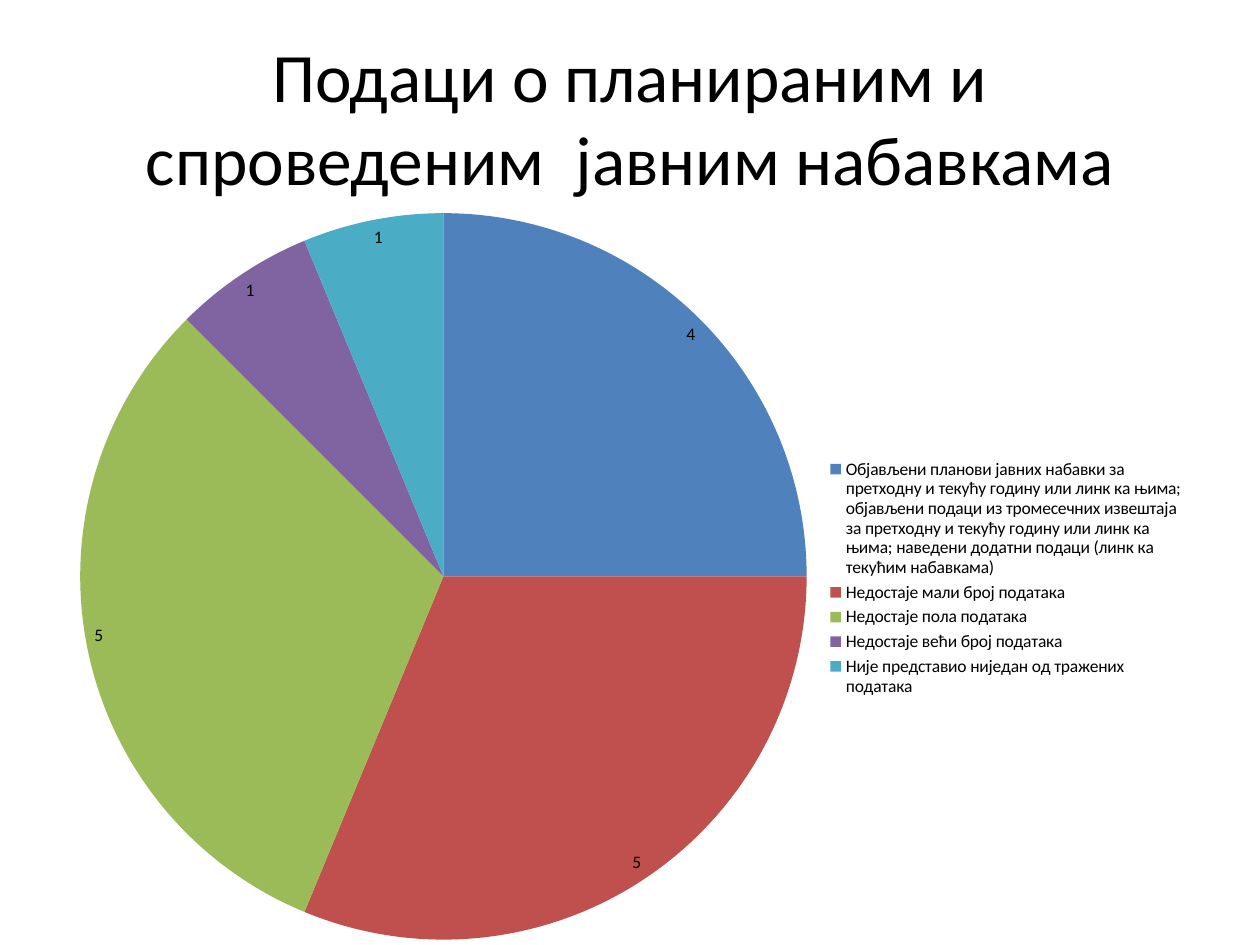
import pptx
import pptx.chart.data
import pptx.dml.color
import pptx.enum.chart
import pptx.enum.text
import pptx.oxml
import pptx.util
from dataclasses import dataclass

Inches = pptx.util.Inches
RGB = pptx.dml.color.RGBColor.from_string


@dataclass(frozen=True)
class Theme:
    font: str = "Calibri"
    ink: str = "000000"
    head: float = 39.6
    small: float = 10


@dataclass(frozen=True)
class Slice:
    label: str
    count: int
    color: str


THEME = Theme()
TITLE = "Подаци о планираним и спроведеним  јавним набавкама"
SLICES = [
    Slice("Објављени планови јавних набавки за претходну и текућу годину "
          "или линк ка њима; објављени подаци из тромесечних извештаја за "
          "претходну и текућу годину или линк ка њима; наведени додатни "
          "подаци (линк ка текућим набавкама)", 4, "4F81BD"),
    Slice("Недостаје мали број података", 5, "C0504D"),
    Slice("Недостаје пола података", 5, "9BBB59"),
    Slice("Недостаје већи број података", 1, "8064A2"),
    Slice("Није представио ниједан од тражених података", 1, "4BACC6"),
]


def style(font, size: float) -> None:
    font.name = THEME.font
    font.size = pptx.util.Pt(size)
    font.color.rgb = RGB(THEME.ink)


def add_title(slide, text: str) -> None:
    title = slide.shapes.title
    title.left, title.top = Inches(0.5), Inches(0.3)
    title.width, title.height = Inches(9), Inches(1.25)
    frame = title.text_frame
    frame.text = text
    frame.word_wrap = True
    frame.auto_size = pptx.enum.text.MSO_AUTO_SIZE.NONE
    frame.vertical_anchor = pptx.enum.text.MSO_ANCHOR.MIDDLE
    para = frame.paragraphs[0]
    para.alignment = pptx.enum.text.PP_ALIGN.CENTER
    style(para.runs[0].font, THEME.head)


def place_plot(chart, x: float, y: float, w: float, h: float) -> None:
    """Fix the pie's area, in fractions of the chart."""
    area = chart.plots[0]._element.getparent()
    for old in area.findall(pptx.oxml.ns.qn("c:layout")):
        area.remove(old)
    parts = "".join(f'<c:{tag} val="{val}"/>' for tag, val in (
        ("layoutTarget", "inner"), ("xMode", "edge"), ("yMode", "edge"),
        ("x", x), ("y", y), ("w", w), ("h", h)))
    area.insert(0, pptx.oxml.parse_xml(
        f'<c:layout {pptx.oxml.ns.nsdecls("c")}>'
        f'<c:manualLayout>{parts}</c:manualLayout></c:layout>'))


def add_pie(slide, slices: list[Slice]) -> None:
    data = pptx.chart.data.CategoryChartData()
    data.categories = [part.label for part in slices]
    data.add_series("Series 1", [part.count for part in slices])
    chart = slide.shapes.add_chart(
        pptx.enum.chart.XL_CHART_TYPE.PIE, Inches(0.5), Inches(1.42),
        Inches(9), Inches(6.33), data).chart
    style(chart.font, THEME.small)
    chart.has_title = False

    # Legend
    chart.has_legend = True
    chart.legend.position = pptx.enum.chart.XL_LEGEND_POSITION.RIGHT
    chart.legend.include_in_layout = False
    style(chart.legend.font, THEME.small)

    # Slices and their values
    plot = chart.plots[0]
    plot.vary_by_categories = True
    for index, part in enumerate(slices):
        fill = plot.series[0].points[index].format.fill
        fill.solid()
        fill.fore_color.rgb = RGB(part.color)
    labels = plot.series[0].data_labels
    labels.show_value = True
    labels.position = pptx.enum.chart.XL_LABEL_POSITION.INSIDE_END
    style(labels.font, THEME.small)
    place_plot(chart, 0.015, 0.043, 0.641, 0.911)


def main() -> None:
    deck = pptx.Presentation()
    deck.slide_width, deck.slide_height = Inches(10), Inches(7.5)
    slide = deck.slides.add_slide(deck.slide_layouts[5])
    add_title(slide, TITLE)
    add_pie(slide, SLICES)
    deck.save("out.pptx")


if __name__ == "__main__":
    main()
